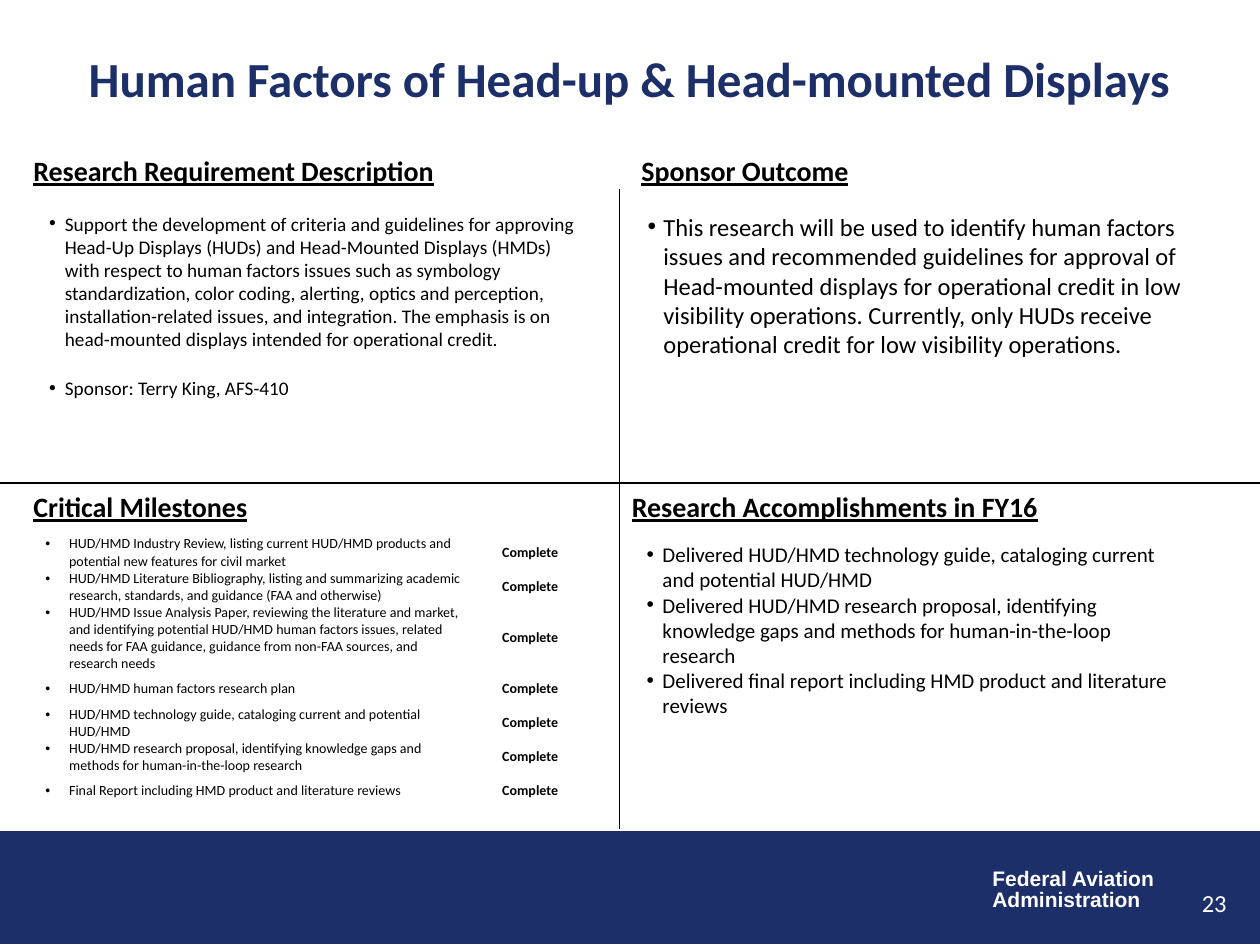
from lxml import etree
from pptx import Presentation
from pptx.dml.color import RGBColor
from pptx.enum.shapes import MSO_CONNECTOR, MSO_SHAPE
from pptx.enum.text import MSO_ANCHOR, PP_ALIGN
from pptx.oxml.ns import qn
from pptx.util import Pt

NAVY = RGBColor(0x1D, 0x2F, 0x68)
BLACK = RGBColor(0, 0, 0)
WHITE = RGBColor(0xFF, 0xFF, 0xFF)
LEFT, CENTER, RIGHT = PP_ALIGN.LEFT, PP_ALIGN.CENTER, PP_ALIGN.RIGHT
TOP, MIDDLE = MSO_ANCHOR.TOP, MSO_ANCHOR.MIDDLE
RECTANGLE = MSO_SHAPE.RECTANGLE
STRAIGHT = MSO_CONNECTOR.STRAIGHT
BODY_INDENT, TABLE_INDENT = 9, 13.5

HEADINGS = [
    ("Research Requirement Description", 12, 84),
    ("Sponsor Outcome", 359.5, 84),
    ("Critical Milestones", 12, 276),
    ("Research Accomplishments in FY16", 354, 276),
]
REQUIREMENT = [
    "Support the development of criteria and guidelines for approving Head-Up Displays (HUDs) "
    "and Head-Mounted Displays (HMDs) with respect to human factors issues such as symbology "
    "standardization, color coding, alerting, optics and perception, installation-related issues, "
    "and integration. The emphasis is on head-mounted displays intended for operational credit.",
    "Sponsor: Terry King, AFS-410",
]
OUTCOME = [
    "This research will be used to identify human factors issues and recommended guidelines for "
    "approval of Head-mounted displays for operational credit in low visibility operations. "
    "Currently, only HUDs receive operational credit for low visibility operations.",
]
ACCOMPLISHMENTS = [
    "Delivered HUD/HMD technology guide, cataloging current and potential HUD/HMD",
    "Delivered HUD/HMD research proposal, identifying knowledge gaps and methods for "
    "human-in-the-loop research",
    "Delivered final report including HMD product and literature reviews",
]
MILESTONES = [
    "HUD/HMD Industry Review, listing current HUD/HMD products and potential new features for "
    "civil market",
    "HUD/HMD Literature Bibliography, listing and summarizing academic research, standards, and "
    "guidance (FAA and otherwise)",
    "HUD/HMD Issue Analysis Paper, reviewing the literature and market, and identifying potential "
    "HUD/HMD human factors issues, related needs for FAA guidance, guidance from non-FAA sources, "
    "and research needs",
    "HUD/HMD human factors research plan",
    "HUD/HMD technology guide, cataloging current and potential HUD/HMD",
    "HUD/HMD research proposal, identifying knowledge gaps and methods for human-in-the-loop "
    "research",
    "Final Report including HMD product and literature reviews",
]


class SlideBuilder:
    def __init__(self, slide, font="Calibri"):
        self.slide = slide
        self.font = font

    def style(self, paragraph, size, color=BLACK, bold=False, underline=False, align=LEFT, font=None):
        paragraph.alignment = align
        for run in paragraph.runs:
            run.font.name = font or self.font
            run.font.size = Pt(size)
            run.font.bold = bold
            run.font.underline = underline
            run.font.color.rgb = color

    def bullet(self, paragraph, indent):
        """Give the paragraph a round bullet with a hanging indent."""
        properties = paragraph._p.get_or_add_pPr()
        properties.set("marL", str(Pt(indent)))
        properties.set("indent", str(-Pt(indent)))
        etree.SubElement(properties, qn("a:buFont"), typeface="Arial")
        etree.SubElement(properties, qn("a:buChar"), char="•")

    def text(self, lines, left, top, width, height, size, indent=0, gap=0, spacing=None,
             anchor=TOP, wrap=True, **style):
        """Add a text box; gap is the space before every line but the first."""
        box = self.slide.shapes.add_textbox(Pt(left), Pt(top), Pt(width), Pt(height))
        frame = box.text_frame
        frame.word_wrap = wrap
        frame.vertical_anchor = anchor
        frame.text = "\n".join(lines)
        for index, paragraph in enumerate(frame.paragraphs):
            if spacing:
                paragraph.line_spacing = spacing
            if index and gap:
                paragraph.space_before = Pt(gap)
            if indent:
                self.bullet(paragraph, indent)
            self.style(paragraph, size, **style)

    def band(self, left, top, width, height, color):
        shape = self.slide.shapes.add_shape(RECTANGLE, Pt(left), Pt(top), Pt(width), Pt(height))
        shape.shadow.inherit = False
        shape.fill.solid()
        shape.fill.fore_color.rgb = color
        shape.line.color.rgb = color
        shape.line.width = Pt(0.75)

    def line(self, x1, y1, x2, y2):
        connector = self.slide.shapes.add_connector(STRAIGHT, Pt(x1), Pt(y1), Pt(x2), Pt(y2))
        connector.line.color.rgb = BLACK
        connector.line.width = Pt(0.75)
        etree.SubElement(connector._element.spPr, qn("a:effectLst"))

    def status_table(self, items, status, left, top, widths, heights, size):
        """Add a table of bulleted items, each with the same status beside it."""
        table = self.slide.shapes.add_table(
            len(items), 2, Pt(left), Pt(top), Pt(sum(widths)), Pt(sum(heights))).table
        table.first_row = table.horz_banding = False
        for column, width in zip(table.columns, widths):
            column.width = Pt(width)
        for row, height, item in zip(table.rows, heights, items):
            row.height = Pt(height)
            for cell, content in zip(row.cells, (item, status)):
                cell.fill.background()
                cell.vertical_anchor = MIDDLE
                cell.margin_left = cell.margin_right = Pt(5)
                cell.margin_top = cell.margin_bottom = 0
                cell.text_frame.text = content
            item_paragraph, status_paragraph = (cell.text_frame.paragraphs[0] for cell in row.cells)
            self.bullet(item_paragraph, TABLE_INDENT)
            self.style(item_paragraph, size)
            self.style(status_paragraph, size, bold=True, align=CENTER)


def main():
    presentation = Presentation()
    presentation.slide_width, presentation.slide_height = Pt(720), Pt(540)
    slide = presentation.slides.add_slide(presentation.slide_layouts[6])
    builder = SlideBuilder(slide)

    builder.band(0, 475.2, 720, 64, NAVY)
    builder.text(["Federal Aviation", "Administration"], 560, 493, 108, 32, 12, spacing=0.85,
                 wrap=False, color=WHITE, bold=True, font="Arial")
    for heading, left, top in HEADINGS:
        builder.text([heading], left, top, 330, 27, 16, bold=True, underline=True)
    builder.line(354, 108, 354, 474)
    builder.line(0, 276, 720, 276)

    builder.text(["Human Factors of Head-up & Head-mounted Displays"], 26, 11, 667, 67, 28,
                 anchor=MIDDLE, color=NAVY, bold=True, align=CENTER)
    builder.text(["23"], 540, 504, 168, 25, 14, color=WHITE, align=RIGHT)
    builder.text(REQUIREMENT, 21, 117.5, 324, 158, 11, indent=BODY_INDENT, gap=15)
    builder.text(OUTCOME, 363, 117.5, 324, 158, 14, indent=BODY_INDENT)
    builder.text(ACCOMPLISHMENTS, 362.5, 306, 324, 158, 12, indent=BODY_INDENT)
    builder.status_table(MILESTONES, "Complete", 21, 306, (249, 66),
                         [19.5, 19.5, 39] + [19.5] * 4, 8)
    presentation.save("out.pptx")


if __name__ == "__main__":
    main()
